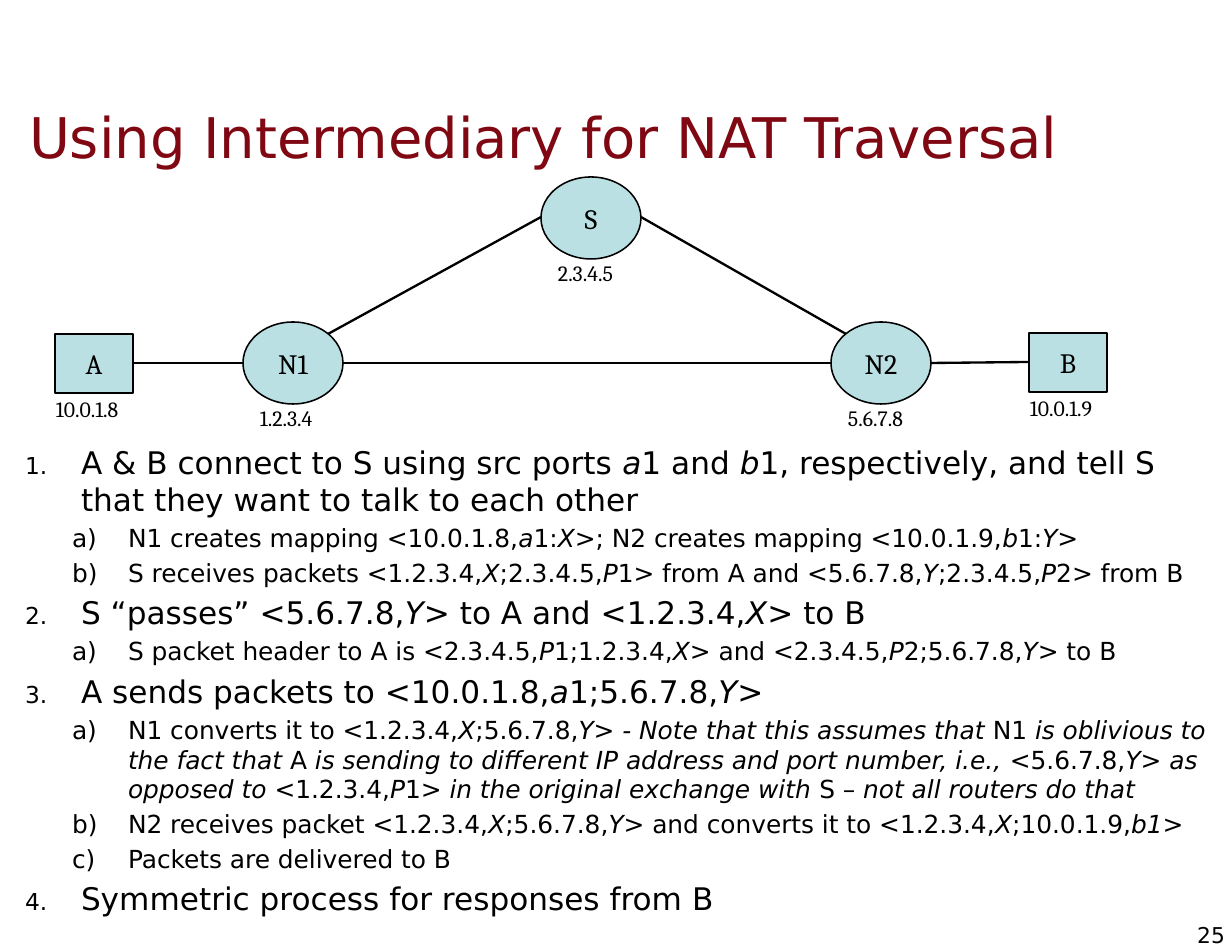
from dataclasses import dataclass

from lxml import etree
from pptx import Presentation
from pptx.dml.color import RGBColor
from pptx.enum.shapes import MSO_CONNECTOR, MSO_SHAPE
from pptx.enum.text import MSO_ANCHOR, MSO_AUTO_SIZE, PP_ALIGN
from pptx.oxml.ns import qn
from pptx.util import Emu, Pt

RECT, OVAL = MSO_SHAPE.RECTANGLE, MSO_SHAPE.OVAL
STRAIGHT = MSO_CONNECTOR.STRAIGHT
LEFT, CENTER, RIGHT = PP_ALIGN.LEFT, PP_ALIGN.CENTER, PP_ALIGN.RIGHT
TOP, MIDDLE = MSO_ANCHOR.TOP, MSO_ANCHOR.MIDDLE
NO_FIT = MSO_AUTO_SIZE.NONE


@dataclass(frozen=True)
class Theme:
    """Colours, fonts and type sizes of the slide."""
    title: str = "7F0813"
    ink: str = "000000"
    node: str = "BBE0E3"
    sans: str = "DejaVu Sans"
    serif: str = "Cambria"
    title_size: int = 36
    level_sizes: tuple = (20, 16)
    node_size: int = 18
    label_size: int = 14


T = Theme()

HOST, ROUTER = (RECT, 78, 59, -10, 56, 103), (OVAL, 100, 82, 6, 77, 90)

NODES = [
    ("A", "10.0.1.8", 55, 334, HOST),
    ("B", "10.0.1.9", 1029, 333, HOST),
    ("N1", "1.2.3.4", 243, 322, ROUTER),
    ("N2", "5.6.7.8", 831, 322, ROUTER),
    ("S", "2.3.4.5", 541, 177, ROUTER),
]

LINKS = [
    (133, 363, 243, 363),
    (328, 334, 541, 217),
    (641, 217, 846, 334),
    (343, 363, 831, 363),
    (931, 363, 1029, 362),
]

STEPS = [
    (0, "A & B connect to S using src ports *a*1 and *b*1, respectively, "
        "and tell S that they want to talk to each other"),
    (1, "N1 creates mapping <10.0.1.8,*a*1:*X*>; "
        "N2 creates mapping <10.0.1.9,*b*1:*Y*>"),
    (1, "S receives packets <1.2.3.4,*X*;2.3.4.5,*P*1> from A "
        "and <5.6.7.8,*Y*;2.3.4.5,*P*2> from B"),
    (0, "S “passes” <5.6.7.8,*Y*> to A and <1.2.3.4,*X*> to B"),
    (1, "S packet header to A is <2.3.4.5,*P*1;1.2.3.4,*X*> "
        "and <2.3.4.5,*P*2;5.6.7.8,*Y*> to B"),
    (0, "A sends packets to <10.0.1.8,*a*1;5.6.7.8,*Y>*"),
    (1, "N1 converts it to <1.2.3.4,*X*;5.6.7.8,*Y> - Note that this assumes "
        "that *N1* is oblivious to the fact that *A* is sending to different "
        "IP address and port number, i.e., *<5.6.7.8,*Y*> *as opposed to *"
        "<1.2.3.4,*P*1*> in the original exchange with *S –* "
        "not all routers do that*"),
    (1, "N2 receives packet <1.2.3.4,*X*;5.6.7.8,*Y*> "
        "and converts it to <1.2.3.4,*X*;10.0.1.9,*b1*>"),
    (1, "Packets are delivered to B"),
    (0, "Symmetric process for responses from B"),
]


def px(n):
    """Turn whole pixels into EMU at 112 pixels to the inch."""
    return Emu(round(n * 914400 / 112))


def rgb(value):
    """Turn a hex string into a colour."""
    return RGBColor.from_string(value)


def place(s, x, y, w, h):
    """Set the position and size of a shape."""
    s.left, s.top, s.width, s.height = px(x), px(y), px(w), px(h)


def set_frame(tf, inset_x, inset_y, anchor=TOP, wrap=True):
    """Set the insets, anchor and wrapping of a text frame."""
    tf.auto_size = NO_FIT
    tf.word_wrap = wrap
    tf.vertical_anchor = anchor
    tf.margin_left = tf.margin_right = px(inset_x)
    tf.margin_top = tf.margin_bottom = px(inset_y)


def write(p, text, size, font=T.sans, color=T.ink, align=LEFT):
    """Write text into a paragraph, with italics between asterisks."""
    p.alignment = align
    for i, part in enumerate(text.split("*")):
        if part:
            r = p.add_run()
            r.text = part
            r.font.size = Pt(size)
            r.font.name = font
            r.font.color.rgb = rgb(color)
            r.font.italic = i % 2 == 1


def number(p, level):
    """Give a paragraph the automatic numbering of its level."""
    indent, percent, style = [(69, 75000, "arabicPeriod"),
                              (116, 100000, "alphaLcParenR")][level]
    p.level = level
    pPr = p._p.get_or_add_pPr()
    pPr.set("marL", str(px(indent)))
    pPr.set("indent", str(px(-56)))
    clr = etree.SubElement(pPr, qn("a:buClr"))
    etree.SubElement(clr, qn("a:srgbClr"), val=T.ink)
    etree.SubElement(pPr, qn("a:buSzPct"), val=str(percent))
    etree.SubElement(pPr, qn("a:buFont"), typeface=T.sans)
    etree.SubElement(pPr, qn("a:buAutoNum"), type=style)


def add_title(slide, text):
    """Fill the title placeholder."""
    s = slide.shapes.title
    place(s, 17, 78, 1179, 117)
    set_frame(s.text_frame, 12, 6, MIDDLE)
    write(s.text_frame.paragraphs[0], text, T.title_size, color=T.title)


def add_steps(slide, steps):
    """Fill the body placeholder with the numbered steps."""
    s = slide.placeholders[1]
    place(s, 0, 437, 1232, 512)
    tf = s.text_frame
    set_frame(tf, 12, 6)
    for i, (level, text) in enumerate(steps):
        p = tf.add_paragraph() if i else tf.paragraphs[0]
        size = T.level_sizes[level]
        number(p, level)
        p.space_before = Pt(size * 0.2 if i else 0)
        write(p, text, size)


def add_text(slide, text, box, inset, **fmt):
    """Add a one-line text box."""
    s = slide.shapes.add_textbox(*map(px, box))
    set_frame(s.text_frame, *inset)
    write(s.text_frame.paragraphs[0], text, T.label_size, **fmt)


def add_node(slide, name, address, x, y, kind):
    """Add a network node with its address below."""
    shape, w, h, dx, dy, label_w = kind
    s = slide.shapes.add_shape(shape, px(x), px(y), px(w), px(h))
    s.shadow.inherit = False
    s.fill.solid()
    s.fill.fore_color.rgb = rgb(T.node)
    s.line.color.rgb = rgb(T.ink)
    s.line.width = Pt(1)
    set_frame(s.text_frame, 0, 6, MIDDLE)
    write(s.text_frame.paragraphs[0], name, T.node_size,
          font=T.serif, align=CENTER)
    add_text(slide, address, (x + dx, y + dy, label_w, 38), (11, 6),
             font=T.serif)


def add_link(slide, *ends):
    """Add a line between two nodes."""
    s = slide.shapes.add_connector(STRAIGHT, *map(px, ends))
    s.line.color.rgb = rgb(T.ink)
    s.line.width = Pt(1.5)
    etree.SubElement(s._element.spPr, qn("a:effectLst"))


def main():
    """Build and save the slide."""
    prs = Presentation()
    prs.slide_width, prs.slide_height = px(1232), px(952)
    slide = prs.slides.add_slide(prs.slide_layouts[1])
    add_title(slide, "Using Intermediary for NAT Traversal")
    add_text(slide, "25", (1187, 921, 38, 27), (0, 0, MIDDLE, False),
             align=RIGHT)
    add_steps(slide, STEPS)
    for node in NODES:
        add_node(slide, *node)
    for link in LINKS:
        add_link(slide, *link)
    prs.save("out.pptx")


if __name__ == "__main__":
    main()
